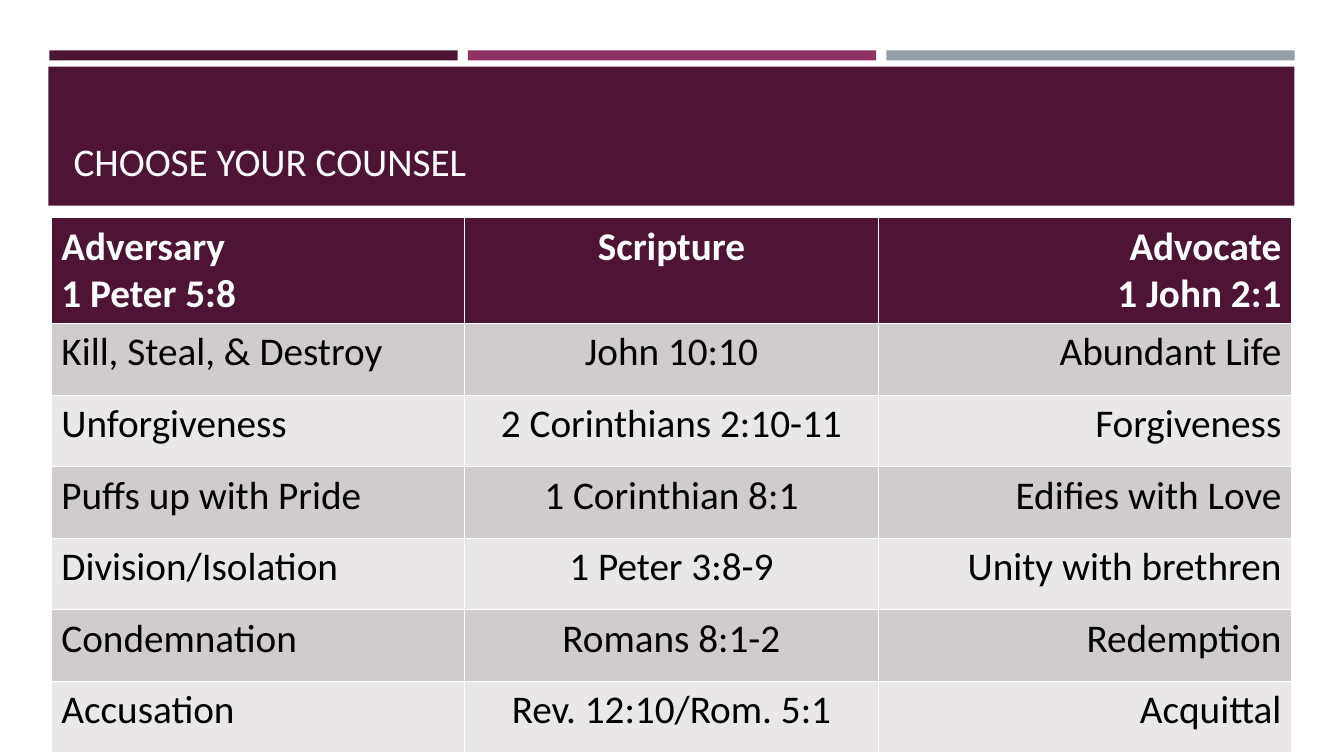
from pptx import Presentation
from pptx.dml.color import RGBColor
from pptx.enum.shapes import MSO_SHAPE
from pptx.enum.text import MSO_ANCHOR, PP_ALIGN
from pptx.util import Inches, Pt

TITLE = "CHOOSE YOUR COUNSEL"
COUNSEL = [
    ("Adversary\n1 Peter 5:8", "Scripture", "Advocate\n1 John 2:1"),
    ("Kill, Steal, & Destroy", "John 10:10", "Abundant Life"),
    ("Unforgiveness", "2 Corinthians 2:10-11", "Forgiveness"),
    ("Puffs up with Pride", "1 Corinthian 8:1", "Edifies with Love"),
    ("Division/Isolation", "1 Peter 3:8-9", "Unity with brethren"),
    ("Condemnation", "Romans 8:1-2", "Redemption"),
    ("Accusation", "Rev. 12:10/Rom. 5:1", "Acquittal"),
]
ALIGNMENTS = (PP_ALIGN.LEFT, PP_ALIGN.CENTER, PP_ALIGN.RIGHT)
COLORS = {
    "plum": "4D1434", "magenta": "903163", "slate": "969FA7",
    "white": "FFFFFF", "black": "000000",
    "odd_row": "D0CCCE", "even_row": "E9E7E8",
}
STRIPES = ("plum", "magenta", "slate")
STRIPE_LEFT, STRIPE_STEP, STRIPE_WIDTH = 0.49, 4.15, 4.05
COLUMN_WIDTH, HEADER_HEIGHT, ROW_HEIGHT = 4.1, 0.7, 0.71


def color(name):
    return RGBColor.from_string(COLORS[name])


def add_bar(slide, left, top, width, height, fill):
    bar = slide.shapes.add_shape(
        MSO_SHAPE.RECTANGLE, Inches(left), Inches(top), Inches(width), Inches(height))
    bar.shadow.inherit = False
    bar.fill.solid()
    bar.fill.fore_color.rgb = color(fill)
    bar.line.fill.background()


def style_text(text_frame, text_color, alignment, bold=False):
    for paragraph in text_frame.paragraphs:
        paragraph.alignment = alignment
        for run in paragraph.runs:
            run.font.name = "Calibri"
            run.font.size = Pt(28)
            run.font.bold = bold
            run.font.color.rgb = color(text_color)


def add_title(slide):
    title = slide.shapes.title
    title.left, title.top = Inches(0.63), Inches(0.8)
    title.width, title.height = Inches(12.06), Inches(1.08)
    title.text_frame.text = TITLE
    title.text_frame.vertical_anchor = MSO_ANCHOR.BOTTOM
    style_text(title.text_frame, "white", PP_ALIGN.LEFT)
    # Bring the title in front of its band
    slide.shapes._spTree.append(title._element)


def add_counsel_table(slide):
    height = HEADER_HEIGHT + ROW_HEIGHT * (len(COUNSEL) - 1)
    table = slide.shapes.add_table(
        len(COUNSEL), len(ALIGNMENTS), Inches(0.51), Inches(2.16),
        Inches(COLUMN_WIDTH * len(ALIGNMENTS)), Inches(height)).table
    for column in table.columns:
        column.width = Inches(COLUMN_WIDTH)
    for r, entries in enumerate(COUNSEL):
        header = r == 0
        table.rows[r].height = Inches(HEADER_HEIGHT if header else ROW_HEIGHT)
        fill = "plum" if header else "odd_row" if r % 2 else "even_row"
        for c, (entry, alignment) in enumerate(zip(entries, ALIGNMENTS)):
            cell = table.cell(r, c)
            cell.fill.solid()
            cell.fill.fore_color.rgb = color(fill)
            cell.text_frame.text = entry
            style_text(cell.text_frame, "white" if header else "black", alignment, header)


def main():
    prs = Presentation()
    prs.slide_width, prs.slide_height = Inches(13.33), Inches(7.5)
    slide = prs.slides.add_slide(prs.slide_layouts[5])
    for i, stripe in enumerate(STRIPES):
        add_bar(slide, STRIPE_LEFT + i * STRIPE_STEP, 0.5, STRIPE_WIDTH, 0.1, stripe)
    add_bar(slide, 0.48, 0.66, 12.36, 1.38, "plum")
    add_title(slide)
    add_counsel_table(slide)
    prs.save("out.pptx")


if __name__ == "__main__":
    main()
